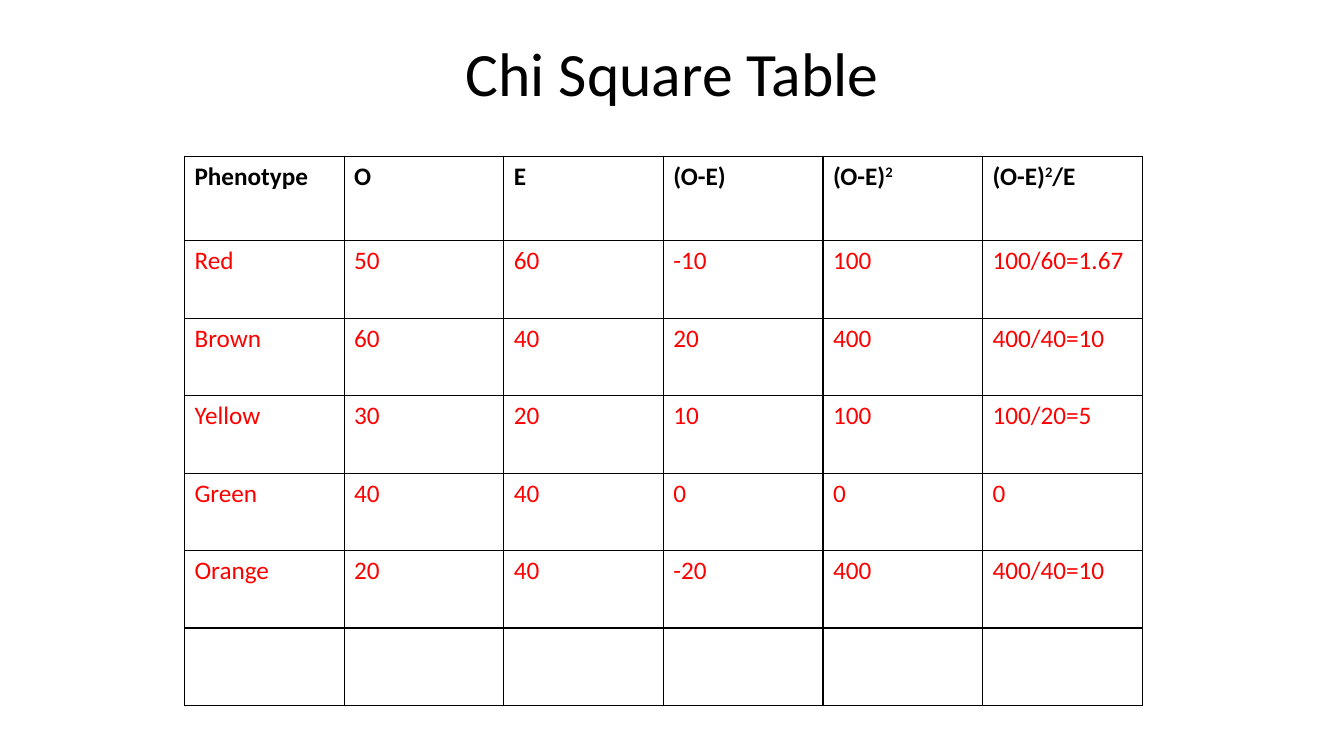
import pptx
import pptx.dml.color
import pptx.enum.text
import pptx.util
from lxml import etree
from pptx.oxml.ns import qn

Inches = pptx.util.Inches
BLACK = pptx.dml.color.RGBColor(0x00, 0x00, 0x00)
RED = pptx.dml.color.RGBColor(0xFF, 0x00, 0x00)
WHITE = pptx.dml.color.RGBColor(0xFF, 0xFF, 0xFF)

TITLE_FORMAT = {"name": "Calibri", "size": pptx.util.Pt(44), "bold": False}
HEADER_FORMAT = {"name": "Calibri", "size": pptx.util.Pt(18), "bold": True}
BODY_FORMAT = {**HEADER_FORMAT, "bold": False}

# "^" marks the digit that is raised
ROWS = [
    ["Phenotype", "O", "E", "(O-E)", "(O-E)^2", "(O-E)^2/E"],
    ["Red", "50", "60", "-10", "100", "100/60=1.67"],
    ["Brown", "60", "40", "20", "400", "400/40=10"],
    ["Yellow", "30", "20", "10", "100", "100/20=5"],
    ["Green", "40", "40", "0", "0", "0"],
    ["Orange", "20", "40", "-20", "400", "400/40=10"],
    [""] * 6,
]
HEADER_HEIGHT = 0.84


def format_font(font, values, color):
    for name, value in values.items():
        setattr(font, name, value)
    font.color.rgb = color


def add_run(paragraph, text, values, color, raised=False):
    run = paragraph.add_run()
    run.text = text
    format_font(run.font, values, color)
    if raised:
        run.font._element.set("baseline", "30000")


def add_borders(cell):
    properties = cell._tc.get_or_add_tcPr()
    for side in ("a:lnL", "a:lnR", "a:lnT", "a:lnB"):
        line = etree.SubElement(properties, qn(side), w=str(pptx.util.Pt(1)))
        fill = etree.SubElement(line, qn("a:solidFill"))
        etree.SubElement(fill, qn("a:srgbClr"), val=str(BLACK))


def fill_cell(cell, text, values, color):
    add_borders(cell)
    cell.fill.solid()
    cell.fill.fore_color.rgb = WHITE
    paragraph = cell.text_frame.paragraphs[0]
    format_font(paragraph.font, values, color)
    base, _, rest = text.partition("^")
    for part, raised in ((base, False), (rest[:1], True), (rest[1:], False)):
        if part:
            add_run(paragraph, part, values, color, raised)


def add_title(slide, left, top, width, height):
    box = slide.shapes.add_textbox(*map(Inches, (left, top, width, height)))
    frame = box.text_frame
    frame.word_wrap = True
    frame.vertical_anchor = pptx.enum.text.MSO_ANCHOR.TOP
    paragraph = frame.paragraphs[0]
    paragraph.alignment = pptx.enum.text.PP_ALIGN.CENTER
    add_run(paragraph, "Chi Square Table", TITLE_FORMAT, BLACK)


def add_chi_square_table(slide, left, top, width, height):
    table = slide.shapes.add_table(
        len(ROWS), len(ROWS[0]), *map(Inches, (left, top, width, height))
    ).table
    table.horz_banding = False

    # Equal columns; the body rows share the height below the header
    for column in table.columns:
        column.width = Inches(width / len(ROWS[0]))
    for index, row in enumerate(table.rows):
        body_height = (height - HEADER_HEIGHT) / (len(ROWS) - 1)
        row.height = Inches(body_height if index else HEADER_HEIGHT)

    # Bold black header, red values
    for row_index, texts in enumerate(ROWS):
        values, color = (BODY_FORMAT, RED) if row_index else (HEADER_FORMAT, BLACK)
        for column_index, text in enumerate(texts):
            fill_cell(table.cell(row_index, column_index), text, values, color)


def main():
    presentation = pptx.Presentation()
    presentation.slide_width = Inches(13.33)
    presentation.slide_height = Inches(7.5)
    slide = presentation.slides.add_slide(presentation.slide_layouts[6])
    slide.background.fill.solid()
    slide.background.fill.fore_color.rgb = WHITE
    add_title(slide, 2.17, 0.3, 9, 1.25)
    add_chi_square_table(slide, 1.83, 1.55, 9.5, 5.45)
    presentation.save("out.pptx")


if __name__ == "__main__":
    main()
